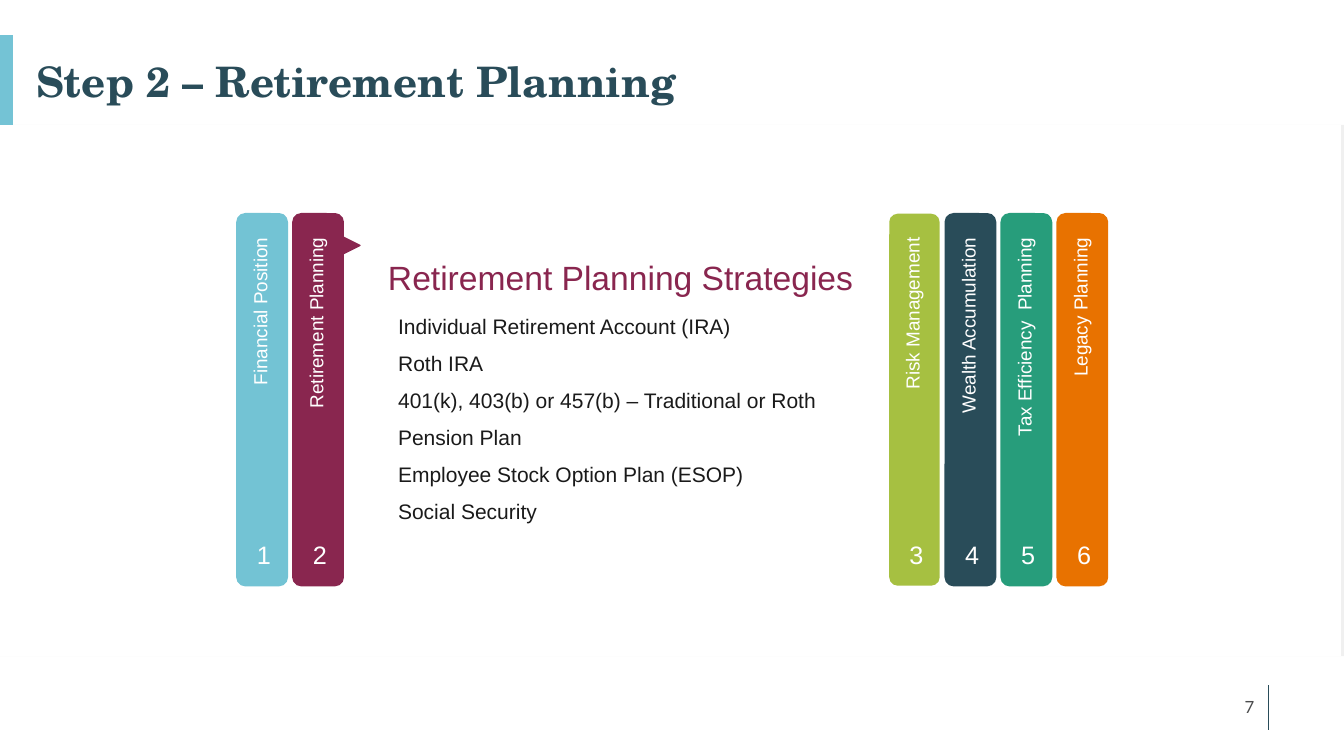
from lxml import etree
from pptx import Presentation
from pptx.dml.color import RGBColor
from pptx.enum.shapes import MSO_CONNECTOR, MSO_SHAPE
from pptx.enum.text import MSO_ANCHOR, PP_ALIGN
from pptx.oxml.ns import qn
from pptx.util import Inches, Pt

LEFT, CENTER, RIGHT = PP_ALIGN.LEFT, PP_ALIGN.CENTER, PP_ALIGN.RIGHT
TOP, MIDDLE, BOTTOM = MSO_ANCHOR.TOP, MSO_ANCHOR.MIDDLE, MSO_ANCHOR.BOTTOM
RECTANGLE, ROUNDED = MSO_SHAPE.RECTANGLE, MSO_SHAPE.ROUNDED_RECTANGLE
ARROW = MSO_SHAPE.RIGHT_ARROW
STRAIGHT = MSO_CONNECTOR.STRAIGHT

SKY, PLUM, LIME = "73C3D4", "89264F", "A6C041"
NAVY, GREEN, ORANGE = "294C59", "279D7B", "E87200"
WHITE, INK, GRAY, EDGE = "FFFFFF", "1A1A1A", "4B4C4D", "F0F0F0"

STEPS_BEFORE = [("Financial Position", SKY), ("Retirement Planning", PLUM)]
STEPS_AFTER = [
    ("Risk Management", LIME),
    ("Wealth Accumulation", NAVY),
    ("Tax Efficiency  Planning", GREEN),
    ("Legacy Planning", ORANGE),
]
STRATEGIES = [
    "Individual Retirement Account (IRA)",
    "Roth IRA",
    "401(k), 403(b) or 457(b) – Traditional or Roth",
    "Pension Plan",
    "Employee Stock Option Plan (ESOP)",
    "Social Security",
]
BAR_WIDTH, BAR_PITCH = 0.5, 0.555
LABEL_LENGTH, LABEL_HEIGHT = 2.3, 0.33


def color(value):
    """Turn a hex string into a colour."""
    return RGBColor.from_string(value)


def write(shape, lines, size, fill, font="Arial", bold=False, align=LEFT,
          anchor=TOP, wrap=True, line_spacing=None, space_before=0):
    """Write one paragraph per line into a shape."""
    frame = shape.text_frame
    frame.word_wrap = wrap
    frame.vertical_anchor = anchor
    for index, line in enumerate(lines):
        paragraph = frame.paragraphs[0] if index == 0 else frame.add_paragraph()
        paragraph.alignment = align
        if line_spacing:
            paragraph.line_spacing = line_spacing
        if index and space_before:
            paragraph.space_before = Pt(space_before)
        run = paragraph.add_run()
        run.text = line
        run.font.name = font
        run.font.size = Pt(size)
        run.font.bold = bold
        run.font.color.rgb = color(fill)


def add_text(slide, box, lines, size, fill, rotation=0, **text_format):
    """Add a text box, turned by the given angle."""
    shape = slide.shapes.add_textbox(*map(Inches, box))
    shape.rotation = rotation
    write(shape, lines, size, fill, **text_format)


def add_block(slide, kind, box, fill, outlined=True):
    """Add a filled shape, outlined in its own colour if asked."""
    shape = slide.shapes.add_shape(kind, *map(Inches, box))
    shape.shadow.inherit = False
    shape.fill.solid()
    shape.fill.fore_color.rgb = color(fill)
    if outlined:
        shape.line.color.rgb = color(fill)
        shape.line.width = Pt(1)
    else:
        shape.line.fill.background()
    return shape


def add_rule(slide, x, top, bottom, fill, width):
    """Add a vertical line."""
    line = slide.shapes.add_connector(
        STRAIGHT, Inches(x), Inches(top), Inches(x), Inches(bottom))
    line.line.color.rgb = color(fill)
    line.line.width = Pt(width)
    etree.SubElement(line._element.spPr, qn("a:effectLst"))


def add_backdrop(slide, box):
    """Place a gray band and the white page that leaves its right edge open."""
    left, top, width, height = box
    add_block(slide, RECTANGLE, box, EDGE, outlined=False)
    add_block(slide, RECTANGLE, (left, top, width - 0.03, height), WHITE, outlined=False)


def add_header(slide, box, title):
    """Place the title and the accent bar at its left."""
    left, top, width, height = box
    add_rule(slide, left - 0.2, top, top + 0.89, "74C3D5", 10)
    add_text(slide, box, [title], 30, NAVY, font="TeX Gyre Schola", bold=True,
             anchor=BOTTOM, line_spacing=0.9)


def add_footer(slide, box, number):
    """Place the page number and the rule at its right."""
    left, top, width, height = box
    add_text(slide, box, [number], 12, GRAY, font="Lato", align=RIGHT, anchor=MIDDLE)
    add_rule(slide, left + width + 0.04, top - 0.01, top + 0.43, NAVY, 0.75)


def add_bars(slide, left, top, height, steps, first_number):
    """Place a row of numbered bars with upright labels."""
    for index, (label, fill) in enumerate(steps):
        x = left + index * BAR_PITCH
        outlined = fill != LIME
        add_block(slide, ROUNDED, (x, top, BAR_WIDTH, height), fill, outlined)
        number = add_block(slide, RECTANGLE, (x + 0.1, top + height - 0.51, 0.34, 0.4),
                           fill, outlined=False)
        write(number, [str(first_number + index)], 18, WHITE, wrap=False)
        label_left = x - 0.02 + (BAR_WIDTH - LABEL_LENGTH) / 2
        label_top = top + 0.14 + (LABEL_LENGTH - LABEL_HEIGHT) / 2
        add_text(slide, (label_left, label_top, LABEL_LENGTH, LABEL_HEIGHT),
                 [label], 13.5, WHITE, align=RIGHT, rotation=270)


def add_strategies(slide, box):
    """Place the card with its heading and list, and the arrow that points to it."""
    left, top, width, height = box
    card = add_block(slide, ROUNDED, box, WHITE, outlined=False)
    card.adjustments[0] = 0.03
    arrow = add_block(slide, ARROW, (left - 0.32, top + 0.2, 0.44, 0.23), PLUM)
    arrow.adjustments[1] = 1
    add_text(slide, (left + 0.4, top + 0.87, width - 0.55, height - 1.31),
             STRATEGIES, 15, INK, line_spacing=1.3, space_before=3)
    add_text(slide, (left + 0.3, top + 0.38, width - 0.34, 0.51),
             ["Retirement Planning Strategies"], 24, PLUM)


def main():
    """Build the slide and save it."""
    presentation = Presentation()
    presentation.slide_width = Inches(13.33)
    presentation.slide_height = Inches(7.5)
    slide = presentation.slides.add_slide(presentation.slide_layouts[6])
    add_backdrop(slide, (0, 1.24, 13.33, 5.27))
    add_header(slide, (0.26, 0.35, 12.77, 0.76), "Step 2 – Retirement Planning")
    add_strategies(slide, (3.45, 2.12, 5.3, 3.69))
    add_bars(slide, 2.35, 2.12, 3.69, STEPS_BEFORE, 1)
    add_bars(slide, 8.82, 2.12, 3.69, STEPS_AFTER, 1 + len(STEPS_BEFORE))
    add_footer(slide, (9.54, 6.81, 3, 0.4), "7")
    presentation.save("out.pptx")


if __name__ == "__main__":
    main()
